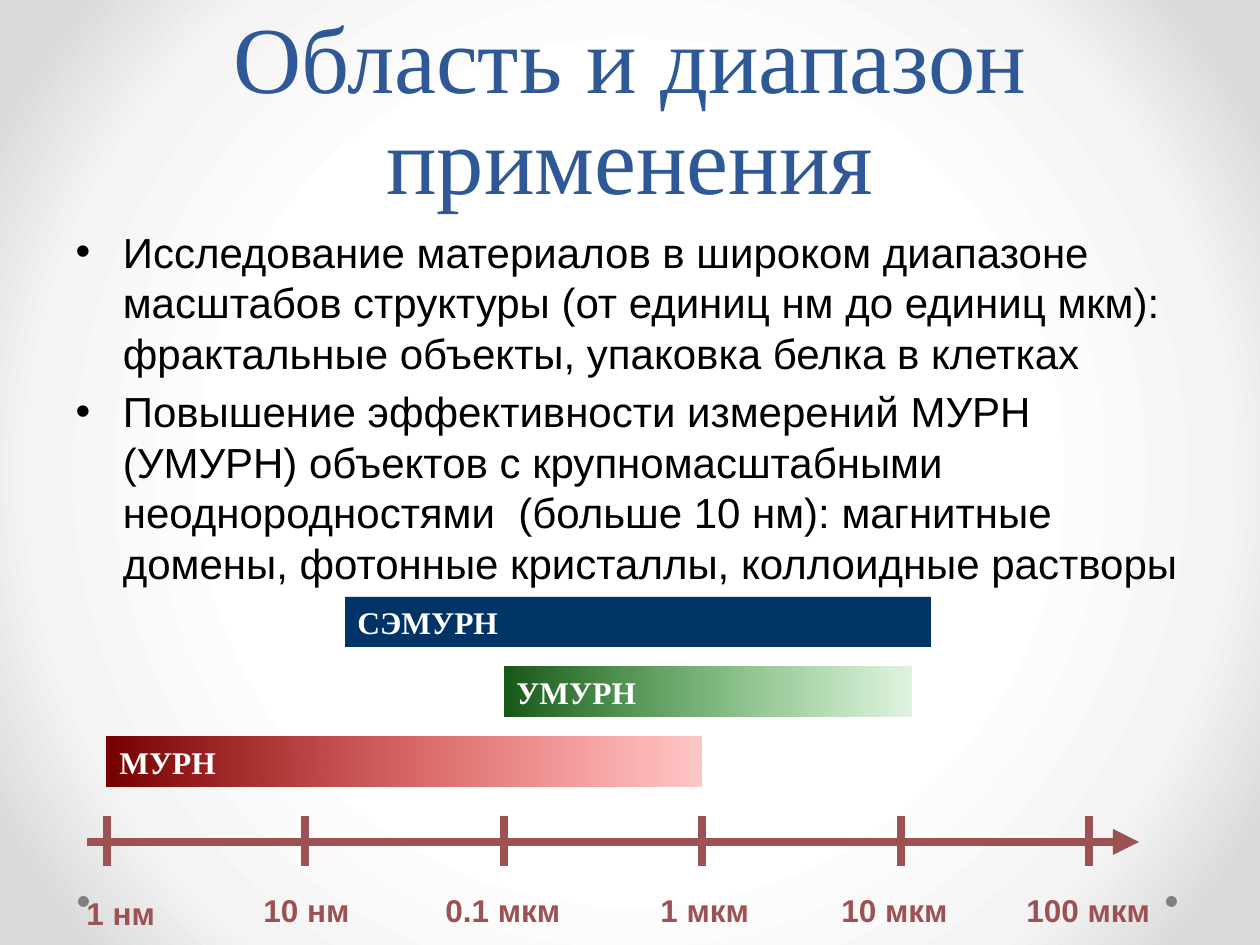
from lxml import etree
from pptx import Presentation
from pptx.dml.color import RGBColor
from pptx.enum.shapes import MSO_CONNECTOR as Connector, MSO_SHAPE as Shape
from pptx.enum.text import MSO_ANCHOR as Anchor, MSO_AUTO_SIZE as AutoSize, PP_ALIGN as Align
from pptx.oxml import parse_xml
from pptx.oxml.ns import nsdecls, qn
from pptx.util import Pt

PX = 914400 / 126
TITLE_BLUE = RGBColor(0x2F, 0x58, 0x97)
AXIS_RED = RGBColor(0x9C, 0x52, 0x52)
BLACK = RGBColor(0, 0, 0)
WHITE = RGBColor(0xFF, 0xFF, 0xFF)
PALE_GREY = RGBColor(0xF4, 0xF4, 0xF4)
LIGHT_GREY = RGBColor(0xDA, 0xDA, 0xDA)
DOT_GREY = RGBColor(0x80, 0x80, 0x80)
NAVY = RGBColor(0, 0x33, 0x66)
DARK_RED = RGBColor(0x76, 0, 0)
RED = RGBColor(0xFF, 0, 0)
DARK_GREEN = RGBColor(0, 0x47, 0)
GREEN = RGBColor(0, 0x99, 0)


def write(shape, *texts, font="Arial", size=18, color=WHITE, bold=False, align=Align.LEFT,
          anchor=Anchor.TOP, wrap=True, fit=AutoSize.NONE, spacing=None):
    frame = shape.text_frame
    frame.word_wrap = wrap
    frame.auto_size = fit
    frame.vertical_anchor = anchor
    for index, text in enumerate(texts):
        paragraph = frame.add_paragraph() if index else frame.paragraphs[0]
        paragraph.alignment = align
        if spacing:
            paragraph.line_spacing = Pt(spacing)
        run = paragraph.add_run()
        run.text = text
        run.font.name = font
        run.font.size = Pt(size)
        run.font.bold = bold
        run.font.color.rgb = color


def set_gradient(owner, fill, stops, direction):
    fill.gradient()
    stop_xml = "".join(
        f'<a:gs pos="{position * 1000}"><a:srgbClr val="{color}">'
        f'<a:alpha val="{opacity * 1000}"/></a:srgbClr></a:gs>'
        for position, color, opacity in stops)
    old = owner.element.xpath(".//a:gradFill")[0]
    old.getparent().replace(old, parse_xml(
        f'<a:gradFill {nsdecls("a")} rotWithShape="1"><a:gsLst>{stop_xml}</a:gsLst>'
        f'{direction}</a:gradFill>'))


presentation = Presentation()
presentation.slide_width = round(1260 * PX)
presentation.slide_height = round(945 * PX)
slide = presentation.slides.add_slide(presentation.slide_layouts[1])
shapes = slide.shapes

set_gradient(
    slide, slide.background.fill,
    [(50, WHITE, 100), (76, PALE_GREY, 100), (92, LIGHT_GREY, 100)],
    '<a:path path="circle"><a:fillToRect l="50000" t="50000" r="50000" b="50000"/></a:path>')

title, body = shapes.title, slide.placeholders[1]
for placeholder, top, height in [(title, 0, 220), (body, 220, 624)]:
    placeholder.left, placeholder.top, placeholder.width, placeholder.height = (
        round(value * PX) for value in (63, top, 1134, height))

write(title, "Область и диапазон применения", font="Times New Roman", size=54,
      color=TITLE_BLUE, align=Align.CENTER, anchor=Anchor.BOTTOM, spacing=58)
write(body,
      "Исследованиe материалов в широком диапазоне масштабов структуры "
      "(от единиц нм до единиц мкм): фрактальные объекты, упаковка белка в клетках",
      "Повышение эффективности измерений МУРН (УМУРН) объектов с крупномасштабными "
      "неоднородностями  (больше 10 нм): магнитные домены, фотонные кристаллы, "
      "коллоидные растворы",
      size=24, color=BLACK)

for left in (1166, 78):
    dot = shapes.add_shape(Shape.OVAL, *(round(value * PX) for value in (left, 896, 11, 11)))
    dot.shadow.inherit = False
    dot.fill.solid()
    dot.fill.fore_color.rgb = DOT_GREY
    dot.line.fill.background()

axis = (87, 842, 1139, 842)
ticks = [(x, 866, x, 816) for x in (107, 305, 504, 702, 901, 1089)]
for ends in [axis, *ticks]:
    line = shapes.add_connector(Connector.STRAIGHT, *(round(value * PX) for value in ends))
    line.line.color.rgb = AXIS_RED
    line.line.width = Pt(5)
    etree.SubElement(line.element.spPr, qn("a:effectLst"))
    if ends == axis:
        outline = line.element.xpath(".//a:ln")[0]
        etree.SubElement(outline, qn("a:tailEnd"), type="triangle")

labels = [
    ("1 нм", 74, 888, 95),
    ("10 нм", 251, 885, 112),
    ("0.1 мкм", 433, 885, 140),
    ("1 мкм", 648, 885, 115),
    ("10 мкм", 829, 885, 132),
    ("100 мкм", 1014, 885, 149),
]
for text, left, top, width in labels:
    label = shapes.add_textbox(*(round(value * PX) for value in (left, top, width, 50)))
    write(label, text, color=AXIS_RED, bold=True, wrap=False, fit=AutoSize.SHAPE_TO_FIT_TEXT)

bars = [
    ("", 107, 737, 595, [(0, DARK_RED, 100), (100, RED, 22)]),
    ("УМУРН", 504, 667, 407, [(0, DARK_GREEN, 91), (100, GREEN, 12)]),
    ("СЭМУРН", 345, 597, 586, None),
]
for text, left, top, width, stops in bars:
    bar = shapes.add_shape(Shape.RECTANGLE,
                           *(round(value * PX) for value in (left, top, width, 50)))
    bar.shadow.inherit = False
    bar.line.fill.background()
    if stops:
        set_gradient(bar, bar.fill, stops, '<a:lin ang="0" scaled="1"/>')
    else:
        bar.fill.solid()
        bar.fill.fore_color.rgb = NAVY
    if text:
        write(bar, text, font="Times New Roman", bold=True, anchor=Anchor.MIDDLE)

caption = shapes.add_textbox(*(round(value * PX) for value in (107, 737, 122, 50)))
write(caption, "МУРН", font="Times New Roman", bold=True, wrap=False,
      fit=AutoSize.SHAPE_TO_FIT_TEXT)

presentation.save("out.pptx")
